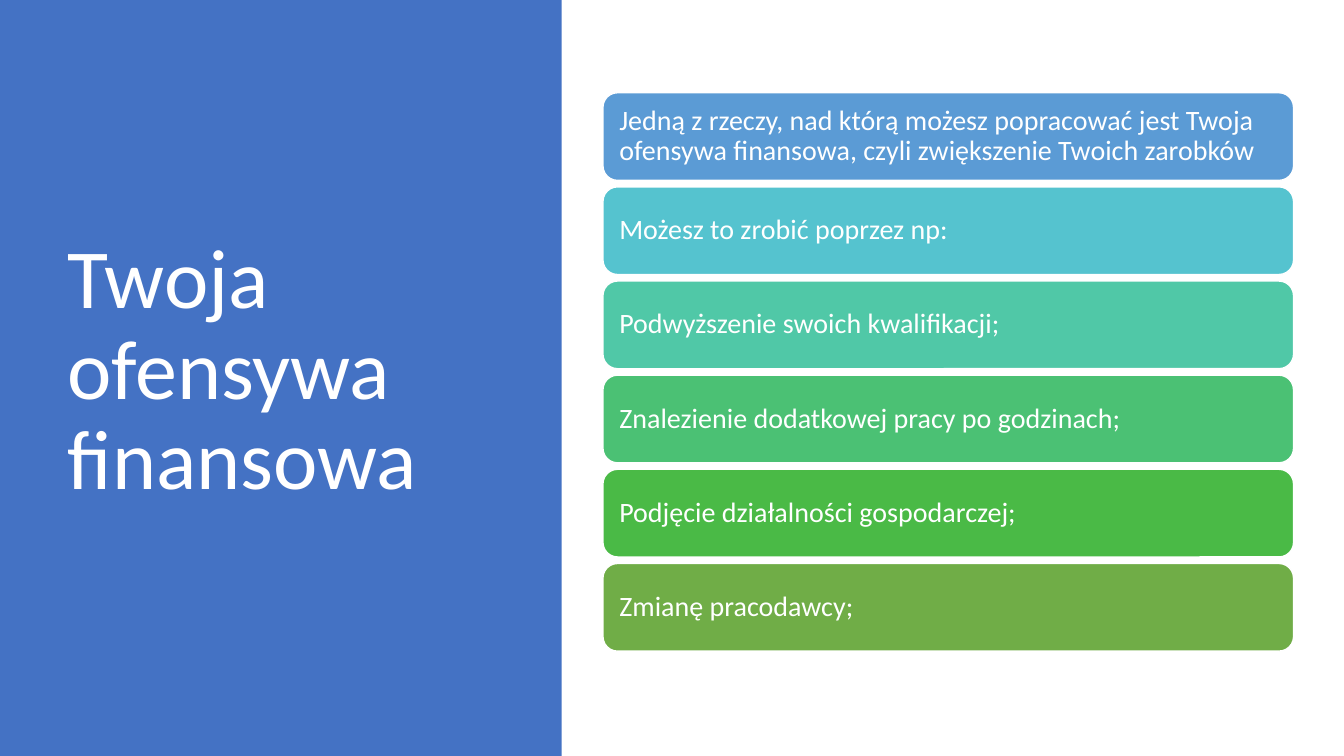
from pptx import Presentation
from pptx.dml.color import RGBColor
from pptx.enum.shapes import MSO_SHAPE
from pptx.enum.text import MSO_ANCHOR, PP_ALIGN
from pptx.util import Inches, Pt

RECT = MSO_SHAPE.RECTANGLE
ROUNDED = MSO_SHAPE.ROUNDED_RECTANGLE
MIDDLE = MSO_ANCHOR.MIDDLE
LEFT = PP_ALIGN.LEFT

WHITE = RGBColor(0xFF, 0xFF, 0xFF)
PANEL_BLUE = RGBColor(0x44, 0x72, 0xC4)
SKY = RGBColor(0x5B, 0x9B, 0xD5)
TURQUOISE = RGBColor(0x55, 0xC3, 0xCF)
MINT = RGBColor(0x50, 0xC8, 0xA7)
EMERALD = RGBColor(0x4B, 0xC1, 0x74)
GREEN = RGBColor(0x4A, 0xBA, 0x46)
OLIVE = RGBColor(0x70, 0xAD, 0x47)

STEPS = [
    ("Jedną z rzeczy, nad którą możesz popracować jest Twoja ofensywa "
     "finansowa, czyli zwiększenie Twoich zarobków", SKY),
    ("Możesz to zrobić poprzez np:", TURQUOISE),
    ("Podwyższenie swoich kwalifikacji;", MINT),
    ("Znalezienie dodatkowej pracy po godzinach;", EMERALD),
    ("Podjęcie działalności gospodarczej;", GREEN),
    ("Zmianę pracodawcy;", OLIVE),
]
STEP_TOP = 0.92
STEP_HEIGHT = 0.87
STEP_BOTTOM = 6.46
STEP_PITCH = (STEP_BOTTOM - STEP_HEIGHT - STEP_TOP) / (len(STEPS) - 1)


class SlideBuilder:
    font = "Calibri"

    def __init__(self, slide):
        self.s = slide

    def set_text(self, sp, text, size):
        tf = sp.text_frame
        tf.text = text
        tf.word_wrap = True
        tf.vertical_anchor = MIDDLE
        p = tf.paragraphs[0]
        p.alignment = LEFT
        p.line_spacing = 0.9
        f = p.runs[0].font
        f.name = self.font
        f.size = Pt(size)
        f.color.rgb = WHITE

    def shape(self, kind, x, y, w, h, color):
        sp = self.s.shapes.add_shape(kind, Inches(x), Inches(y), Inches(w), Inches(h))
        sp.shadow.inherit = False
        sp.fill.solid()
        sp.fill.fore_color.rgb = color
        sp.line.fill.background()
        return sp

    def panel(self, x, y, w, h, color):
        sp = self.shape(RECT, x, y, w, h, color)
        self.s.shapes.title.element.addprevious(sp.element)

    def title(self, x, y, w, h, text):
        sp = self.s.shapes.title
        sp.left, sp.top, sp.width, sp.height = (Inches(v) for v in (x, y, w, h))
        self.set_text(sp, text, 60)

    def step(self, x, y, w, h, text, color):
        sp = self.shape(ROUNDED, x, y, w, h, color)
        sp.line.color.rgb = WHITE
        sp.line.width = Pt(1)
        tf = sp.text_frame
        tf.margin_left = tf.margin_right = Inches(0.12)
        tf.margin_top = tf.margin_bottom = Inches(0.12)
        self.set_text(sp, text, 20)


def main():
    prs = Presentation()
    prs.slide_width = Inches(13.33)
    prs.slide_height = Inches(7.5)
    b = SlideBuilder(prs.slides.add_slide(prs.slide_layouts[5]))
    b.panel(0, 0, 5.57, 7.5, PANEL_BLUE)
    b.title(0.57, 0.68, 4.16, 6.02, "Twoja ofensywa finansowa")
    for i, (text, color) in enumerate(STEPS):
        b.step(5.98, STEP_TOP + i * STEP_PITCH, 6.85, STEP_HEIGHT, text, color)
    prs.save("out.pptx")


if __name__ == "__main__":
    main()
